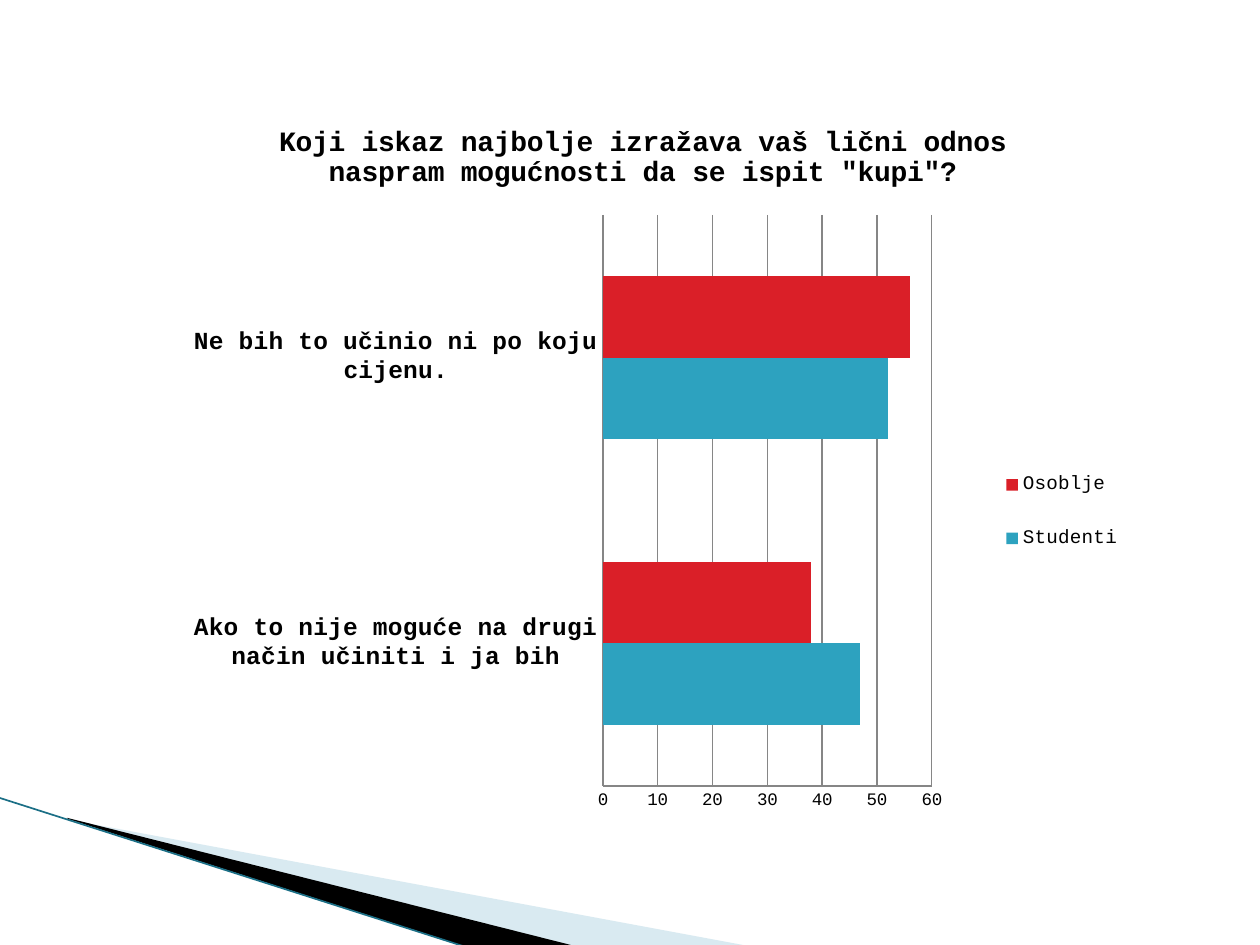
from lxml import etree
from pptx import Presentation
from pptx.chart.data import CategoryChartData
from pptx.dml.color import RGBColor
from pptx.enum.chart import XL_CHART_TYPE, XL_LEGEND_POSITION, XL_TICK_MARK
from pptx.enum.shapes import MSO_CONNECTOR
from pptx.oxml import parse_xml
from pptx.oxml.ns import nsdecls, qn
from pptx.util import Pt

BAR = XL_CHART_TYPE.BAR_CLUSTERED
LEGEND_RIGHT = XL_LEGEND_POSITION.RIGHT
NO_TICK = XL_TICK_MARK.NONE

BLACK = RGBColor(0x00, 0x00, 0x00)
PALE = RGBColor(0xA0, 0xCB, 0xDC)
TEAL = RGBColor(0x1B, 0x6F, 0x86)
GRAY = RGBColor(0x86, 0x86, 0x86)
FONT = "Courier New"

TITLE = 'Koji iskaz najbolje izražava vaš lični odnos naspram mogućnosti da se ispit "kupi"?'
CATEGORIES = [
    "Ako to nije moguće na drugi način učiniti i ja bih",
    "Ne bih to učinio ni po koju cijenu.",
]
SERIES = [
    ("Studenti", (47, 52), RGBColor(0x2D, 0xA2, 0xBF)),
    ("Osoblje", (38, 56), RGBColor(0xDA, 0x1F, 0x28)),
]
CHART_BOX = (90, 56, 554.5, 426)

# Corner decoration: frame, outline points, fill, opacity in percent
WEDGES = [
    ((56.2, 393.8, 299.5, 113.8),
     [(39.6, 468.5), (428.4, 540.7), (328.3, 540.7), (39.6, 468)], PALE, 40),
    ((-4.3, 455.8, 299.5, 66.2),
     [(38.2, 467.3), (329, 540.7), (267.8, 541.4), (38.9, 468)], BLACK, 100),
]
EDGE = (-0.7, 455.8, 267.1, 541.4)


def add_wedge(shapes, frame, points, color, opacity):
    """Draw an outline that reaches beyond its frame."""
    pts = [(Pt(x), Pt(y)) for x, y in points]
    builder = shapes.build_freeform(*pts[0])
    builder.add_line_segments(pts[1:], close=True)
    sp = builder.convert_to_shape()
    left, top, width, height = map(Pt, frame)
    outline = sp._element.find(".//" + qn("a:path"))
    outline.set("w", str(width))
    outline.set("h", str(height))
    for pt, (x, y) in zip(outline.iter(qn("a:pt")), pts):
        pt.set("x", str(x - left))
        pt.set("y", str(y - top))
    sp.left, sp.top, sp.width, sp.height = left, top, width, height

    sp.shadow.inherit = False
    sp.fill.solid()
    sp.fill.fore_color.rgb = color
    sp.line.fill.background()
    if opacity < 100:
        clr = sp.fill._xPr.find(".//" + qn("a:srgbClr"))
        etree.SubElement(clr, qn("a:alpha")).set("val", str(opacity * 1000))


def set_layout(element, after, inner=False, **percents):
    """Place a chart part by percents of the chart area."""
    for old in element.findall(qn("c:layout")):
        element.remove(old)
    parts = '<c:layoutTarget val="inner"/>' if inner else ""
    parts += "".join(f'<c:{k}Mode val="edge"/>' for k in "xy")
    parts += "".join(f'<c:{k} val="{v / 100:.3f}"/>' for k, v in percents.items())
    layout = parse_xml(
        f'<c:layout {nsdecls("c")}><c:manualLayout>{parts}</c:manualLayout></c:layout>')
    if after is None:
        element.insert(0, layout)
    else:
        element.find(qn(after)).addnext(layout)


def style_font(font, size, bold=False):
    font.name = FONT
    font.size = Pt(size)
    font.bold = bold
    font.color.rgb = BLACK


def add_bar_chart(shapes):
    data = CategoryChartData()
    data.categories = CATEGORIES
    for name, values, _ in SERIES:
        data.add_series(name, values)
    chart = shapes.add_chart(BAR, *map(Pt, CHART_BOX), data).chart
    style_font(chart.font, 10)

    tf = chart.chart_title.text_frame
    tf.text = TITLE
    style_font(tf.paragraphs[0].runs[0].font, 16, True)
    chart.chart_title.include_in_layout = False

    plot = chart.plots[0]
    plot.gap_width = 150
    plot.vary_by_categories = False
    for series, (_, _, color) in zip(plot.series, SERIES):
        series.format.fill.solid()
        series.format.fill.fore_color.rgb = color

    cat, val = chart.category_axis, chart.value_axis
    for axis in (cat, val):
        axis.major_tick_mark = axis.minor_tick_mark = NO_TICK
        axis.format.line.color.rgb = GRAY
        axis.format.line.width = Pt(0.75)
    style_font(cat.tick_labels.font, 14, True)
    style_font(val.tick_labels.font, 10)
    val.minimum_scale, val.maximum_scale, val.major_unit = 0, 60, 10
    val.has_major_gridlines = True
    val.major_gridlines.format.line.color.rgb = GRAY
    val.major_gridlines.format.line.width = Pt(0.75)

    chart.has_legend = True
    legend = chart.legend
    legend.position = LEGEND_RIGHT
    legend.include_in_layout = False
    style_font(legend.font, 11)

    root = chart.element
    set_layout(root.find(".//" + qn("c:title")), "c:tx", x=12, y=3)
    set_layout(root.find(".//" + qn("c:plotArea")), None, inner=True,
               x=45.9, y=15.7, w=33.9, h=76.6)
    set_layout(root.find(".//" + qn("c:legend")), "c:legendPos",
               x=86.7, y=46.2, w=13, h=18.6)


prs = Presentation()
prs.slide_width, prs.slide_height = Pt(720), Pt(540)
s = prs.slides.add_slide(prs.slide_layouts[6])

for wedge in WEDGES:
    add_wedge(s.shapes, *wedge)
edge = s.shapes.add_connector(MSO_CONNECTOR.STRAIGHT, *map(Pt, EDGE))
edge.line.color.rgb = TEAL
edge.line.width = Pt(0.95)
etree.SubElement(edge._element.spPr, qn("a:effectLst"))

add_bar_chart(s.shapes)
prs.save("out.pptx")
